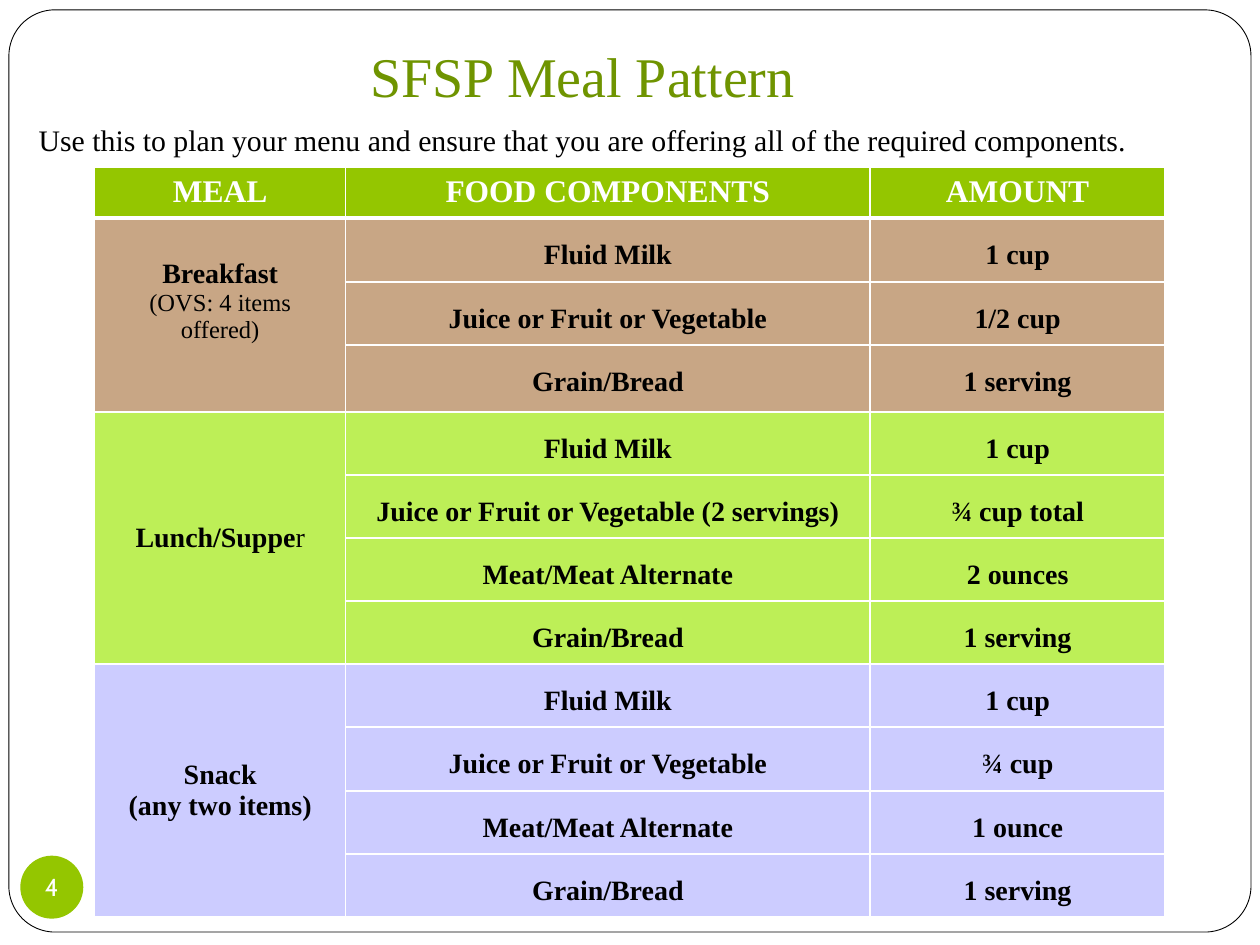
from lxml import etree
from pptx import Presentation
from pptx.dml import color
from pptx.enum import shapes, text
from pptx.oxml import ns
from pptx.util import Cm, Pt

SERIF = "Times New Roman"
GREEN, WHITE, BLACK = "94C600", "FFFFFF", "000000"
COLUMNS = (5.06, 10.57, 5.95)
HEADINGS = ("MEAL", "FOOD COMPONENTS", "AMOUNT")
HEADING_HEIGHT = 0.97
MEALS = [
    {
        "label": [[("Breakfast", 16, True)], [("(OVS: 4 items offered)", 14, False)]],
        "fill": "C8A685",
        "lift": 0.55,
        "heights": (1.29, 1.2, 1.35),
        "items": [
            ("Fluid Milk", "1 cup"),
            ("Juice or Fruit or Vegetable", "1/2 cup"),
            ("Grain/Bread", "1 serving"),
        ],
    },
    {
        "label": [[("Lunch/Suppe", 16, True), ("r", 16, False)]],
        "fill": "BDEF57",
        "lift": 0,
        "heights": (1.2, 1.2, 1.2, 1.2),
        "items": [
            ("Fluid Milk", "1 cup"),
            ("Juice or Fruit or Vegetable (2 servings)", "¾ cup total"),
            ("Meat/Meat Alternate", "2 ounces"),
            ("Grain/Bread", "1 serving"),
        ],
    },
    {
        "label": [[("Snack", 16, True)], [("(any two items)", 16, True)]],
        "fill": "CCCCFF",
        "lift": 0,
        "heights": (1.2, 1.29, 1.2, 1.2),
        "items": [
            ("Fluid Milk", "1 cup"),
            ("Juice or Fruit or Vegetable", "¾ cup"),
            ("Meat/Meat Alternate", "1 ounce"),
            ("Grain/Bread", "1 serving"),
        ],
    },
]


def paint(target, hex_colour):
    """Give a fill a solid colour."""
    target.solid()
    target.fore_color.rgb = color.RGBColor.from_string(hex_colour)


def write(frame, paragraphs, hex_colour, font=SERIF, spacing=None):
    """Write centred paragraphs, each a list of (words, size, bold) runs."""
    for index, runs in enumerate(paragraphs):
        paragraph = frame.add_paragraph() if index else frame.paragraphs[0]
        paragraph.alignment = text.PP_ALIGN.CENTER
        paragraph.line_spacing = spacing
        for words, size, bold in runs:
            run = paragraph.add_run()
            run.text = words
            run.font.name = font
            run.font.size = Pt(size)
            run.font.bold = bold
            paint(run.font.fill, hex_colour)


def add_page_border(slide, left, top, width, height):
    """Draw the rounded border around the page."""
    border = slide.shapes.add_shape(
        shapes.MSO_SHAPE.ROUNDED_RECTANGLE, Cm(left), Cm(top), Cm(width), Cm(height)
    )
    border.adjustments[0] = 0.05
    border.shadow.inherit = False
    paint(border.fill, WHITE)
    paint(border.line.fill, BLACK)
    border.line.width = Pt(0.5)


def add_line_of_text(slide, left, top, width, height, words, size, hex_colour, anchor):
    """Place one centred line of text in a box."""
    frame = slide.shapes.add_textbox(Cm(left), Cm(top), Cm(width), Cm(height)).text_frame
    frame.word_wrap = True
    frame.vertical_anchor = anchor
    write(frame, [[(words, size, False)]], hex_colour)
    return frame


def add_page_number(slide, left, top, diameter, number):
    """Draw the round page number badge."""
    badge = slide.shapes.add_shape(
        shapes.MSO_SHAPE.OVAL, Cm(left), Cm(top), Cm(diameter), Cm(diameter)
    )
    badge.shadow.inherit = False
    paint(badge.fill, GREEN)
    badge.line.fill.background()
    frame = badge.text_frame
    frame.word_wrap = False
    frame.vertical_anchor = text.MSO_ANCHOR.MIDDLE
    frame.margin_left = frame.margin_right = frame.margin_top = frame.margin_bottom = 0
    write(frame, [[(number, 14, False)]], WHITE, font="Cabin")


def style_cell(cell, hex_colour, top=1, bottom=1):
    """Fill a cell and rule it in white, with top and bottom widths in points."""
    properties = cell._tc.get_or_add_tcPr()
    for side, points in (("lnL", 1), ("lnR", 1), ("lnT", top), ("lnB", bottom)):
        rule = etree.SubElement(properties, ns.qn(f"a:{side}"), w=str(Pt(points)))
        solid = etree.SubElement(rule, ns.qn("a:solidFill"))
        etree.SubElement(solid, ns.qn("a:srgbClr"), val=WHITE)
    paint(cell.fill, hex_colour)


def add_meal_table(slide, left, top):
    """Build the table of meals, components and amounts."""
    heights = [HEADING_HEIGHT] + [height for meal in MEALS for height in meal["heights"]]
    table = slide.shapes.add_table(
        len(heights), len(COLUMNS), Cm(left), Cm(top), Cm(sum(COLUMNS)), Cm(sum(heights))
    ).table
    for column, width in zip(table.columns, COLUMNS):
        column.width = Cm(width)
    for row, height in zip(table.rows, heights):
        row.height = Cm(height)

    for column, heading in enumerate(HEADINGS):
        cell = table.cell(0, column)
        style_cell(cell, GREEN, bottom=3)
        write(cell.text_frame, [[(heading, 18, True)]], WHITE)

    first = 1
    for meal in MEALS:
        for row, item in enumerate(meal["items"], first):
            top_rule = 3 if row == 1 else 1
            style_cell(table.cell(row, 0), meal["fill"], top=top_rule)
            for column, words in enumerate(item, 1):
                cell = table.cell(row, column)
                style_cell(cell, meal["fill"], top=top_rule)
                write(cell.text_frame, [[(words, 16, True)]], BLACK, spacing=1.5)
        label = table.cell(first, 0)
        label.merge(table.cell(row, 0))
        label.vertical_anchor = text.MSO_ANCHOR.MIDDLE
        label.margin_bottom = Cm(0.13 + meal["lift"])
        write(label.text_frame, meal["label"], BLACK)
        first = row + 1


def main():
    """Build and save the slide."""
    deck = Presentation()
    deck.slide_width, deck.slide_height = Cm(25.4), Cm(19.05)
    slide = deck.slides.add_slide(deck.slide_layouts[6])
    add_page_border(slide, 0.18, 0.2, 25.04, 18.59)
    title = add_line_of_text(
        slide, 1.17, 0.03, 21.16, 2.41, "SFSP Meal Pattern", 32, "6F9400", text.MSO_ANCHOR.BOTTOM
    )
    title.margin_bottom = Cm(0.25)
    add_page_number(slide, 0.41, 17.25, 1.27, "4")
    add_meal_table(slide, 1.91, 3.38)
    add_line_of_text(
        slide, 0, 2.34, 23.5, 0.99,
        "Use this to plan your menu and ensure that you are offering all of the required components.",
        17, BLACK, text.MSO_ANCHOR.TOP,
    )
    deck.save("out.pptx")


if __name__ == "__main__":
    main()
